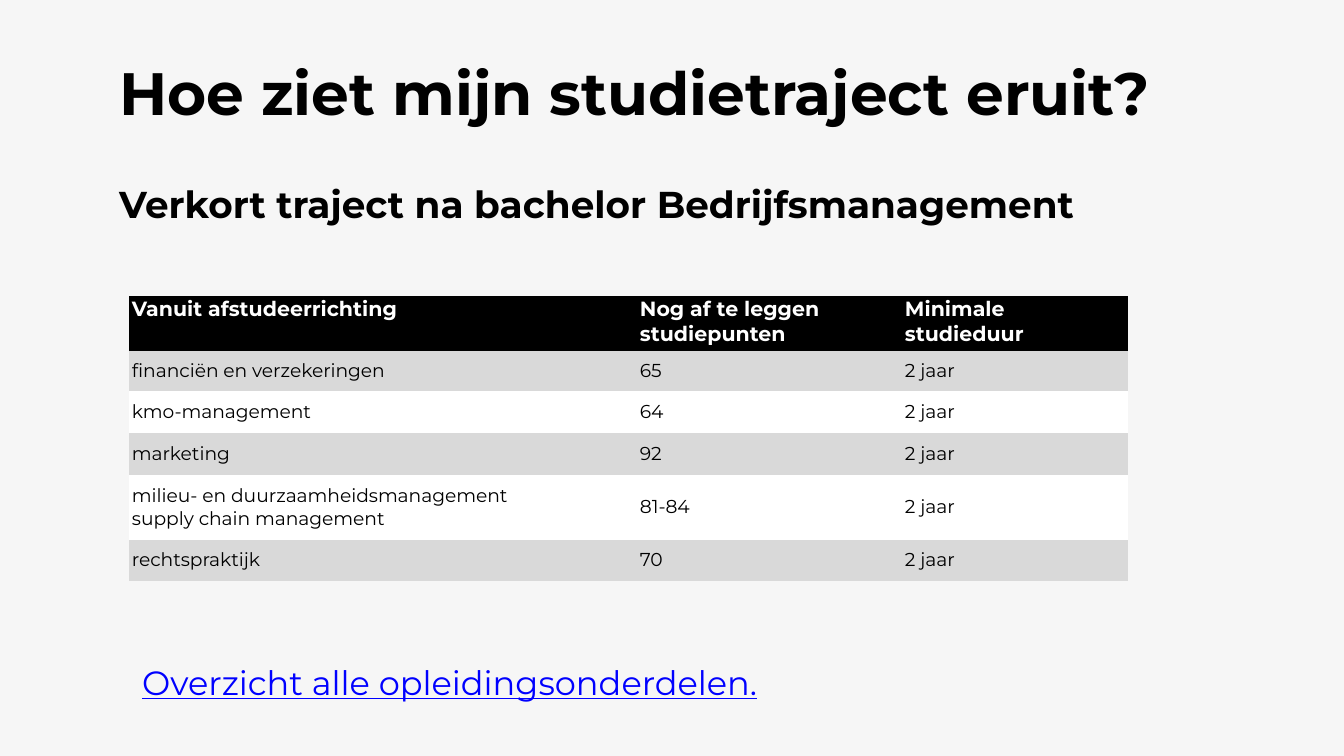
from dataclasses import dataclass

from lxml import etree
from pptx import Presentation
from pptx import util as u
from pptx.dml.color import RGBColor
from pptx.enum import text
from pptx.oxml.ns import qn

SCALE = 914400 / 134.4  # EMU in one px
FONT = "Montserrat"
HUES = {"back": "F6F6F6", "ink": "000000", "white": "FFFFFF",
        "band": "D9D9D9", "link": "0000FF"}
PLAIN = "{2D5ABB26-0587-4C30-8999-92F81FD0307C}"  # no style, no grid

COLS = [508, 265, 226]
ROWS = [54, 41, 42, 42, 65, 41]
HEAD = ["Vanuit afstudeerrichting", "Nog af te leggen studiepunten",
        "Minimale studieduur"]
TRACKS = [
    ("financiën en verzekeringen", "65"),
    ("kmo-management", "64"),
    ("marketing", "92"),
    ("milieu- en duurzaamheidsmanagement\nsupply chain management", "81-84"),
    ("rechtspraktijk", "70"),
]
TIME = "2 jaar"


@dataclass
class Box:
    x: int
    y: int
    w: int
    h: int

    def emu(self) -> list[int]:
        return [px(n) for n in (self.x, self.y, self.w, self.h)]


@dataclass
class Look:
    size: int
    hue: str
    bold: bool = False
    line: bool = False


def px(n: int) -> int:
    return round(n * SCALE)


def rgb(name: str) -> RGBColor:
    return RGBColor.from_string(HUES[name])


def write(frame, words: str, look: Look) -> None:
    frame.text = words
    frame.word_wrap = True
    for para in frame.paragraphs:
        para.alignment = text.PP_ALIGN.LEFT
        for run in para.runs:
            font = run.font
            font.name, font.size = FONT, u.Pt(look.size)
            font.bold, font.underline = look.bold, look.line
            font.color.rgb = rgb(look.hue)


def rule(cell) -> None:
    """Draw a black line under a cell."""
    line = etree.Element(qn("a:lnB"), w=str(u.Pt(1)))
    fill = etree.SubElement(line, qn("a:solidFill"))
    etree.SubElement(fill, qn("a:srgbClr"), val=HUES["ink"])
    cell._tc.get_or_add_tcPr().insert(0, line)


def draw_cell(cell, words: str, look: Look, fill: str, anchor) -> None:
    write(cell.text_frame, words, look)
    cell.fill.solid()
    cell.fill.fore_color.rgb = rgb(fill)
    cell.vertical_anchor = anchor
    cell.margin_left = cell.margin_right = px(3)
    cell.margin_top = cell.margin_bottom = px(1)


def draw_table(slide, x: int, y: int) -> None:
    box = Box(x, y, sum(COLS), sum(ROWS))
    table = slide.shapes.add_table(len(ROWS), len(COLS), *box.emu()).table
    table._tbl.tblPr.find(qn("a:tableStyleId")).text = PLAIN
    table.horz_banding = False
    for col, width in zip(table.columns, COLS):
        col.width = px(width)
    for row, height in zip(table.rows, ROWS):
        row.height = px(height)

    for cell, words in zip(table.rows[0].cells, HEAD):
        draw_cell(cell, words, Look(11, "white", bold=True), "ink",
                  text.MSO_ANCHOR.TOP)
        rule(cell)
    for r, track in enumerate(TRACKS, 1):
        fill = "band" if r % 2 else "white"
        for cell, words in zip(table.rows[r].cells, (*track, TIME)):
            draw_cell(cell, words, Look(10, "ink"), fill,
                      text.MSO_ANCHOR.MIDDLE)


def draw_text(slide, box: Box, words: str, look: Look) -> None:
    frame = slide.shapes.add_textbox(*box.emu()).text_frame
    write(frame, words, look)


def main() -> None:
    deck = Presentation()
    deck.slide_width, deck.slide_height = px(1344), px(756)
    slide = deck.slides.add_slide(deck.slide_layouts[5])
    slide.background.fill.solid()
    slide.background.fill.fore_color.rgb = rgb("back")

    title = slide.shapes.title
    title.left, title.top, title.width, title.height = Box(
        106, 47, 1175, 90).emu()
    write(title.text_frame, "Hoe ziet mijn studietraject eruit?",
          Look(32, "ink", bold=True))
    title.text_frame.vertical_anchor = text.MSO_ANCHOR.MIDDLE

    draw_text(slide, Box(106, 175, 1175, 60),
              "Verkort traject na bachelor Bedrijfsmanagement",
              Look(20, "ink", bold=True))
    draw_table(slide, 129, 296)
    draw_text(slide, Box(129, 655, 672, 54),
              "Overzicht alle opleidingsonderdelen.",
              Look(18, "link", line=True))
    deck.save("out.pptx")


if __name__ == "__main__":
    main()
